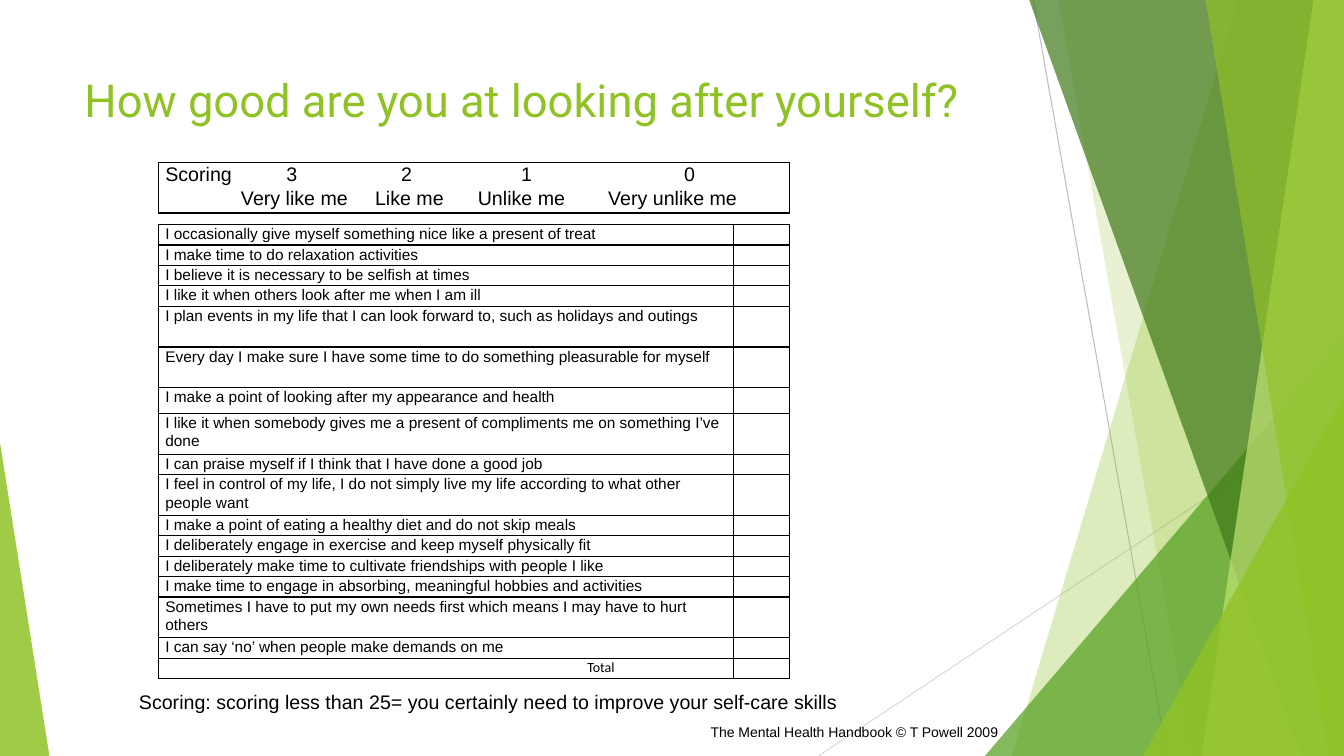
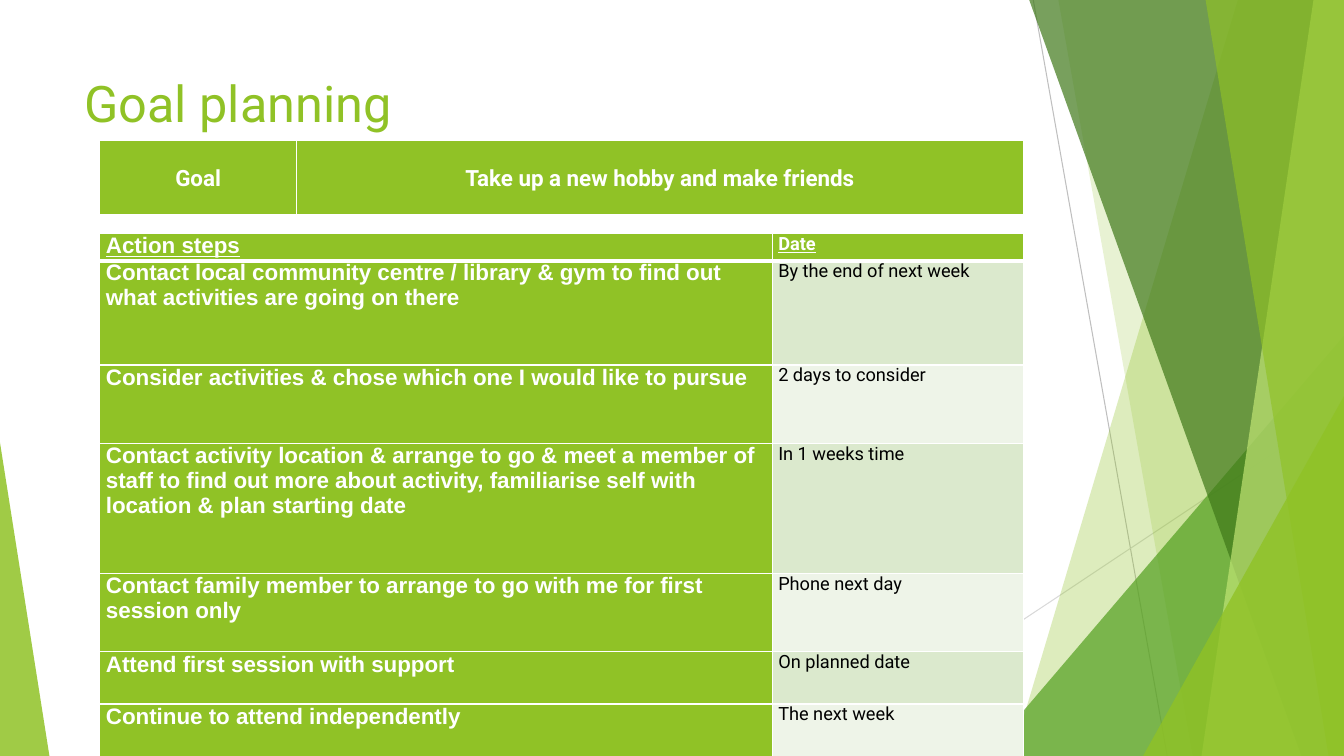
import lxml.etree
import pptx
import pptx.dml.color
import pptx.enum.shapes
import pptx.enum.text
import pptx.oxml.ns
import pptx.util

LIME, BLACK, WHITE = "90C226", "000000", "FFFFFF"
PALE = ("DBE9CD", "EEF4E8")

LINES = [
    (76.88, 0, 86.85, 100, "BFBFBF"),
    (100, 53.73, 60.9, 100, "D9D9D9"),
]
BANDS = [
    ("blade", 92.1, 75.3, LIME, 30),
    ("blade", 78.75, 88.73, LIME, 20),
    ("wedge", 73.28, 44.4, "54A021", 72),
    ("blade", 76.58, 96.83, "3F7819", 70),
    ("blade", 97.73, 89.4, "C0E474", 70),
    ("blade", 89.7, 98.85, LIME, 65),
    ("wedge", 85.05, 52.4, LIME, 80),
]

QUIZ = [
    ("I occasionally give myself something nice like a present of treat", 2.7),
    ("I make time to do relaxation activities", 2.7),
    ("I believe it is necessary to be selfish at times", 2.7),
    ("I like it when others look after me when I am ill", 2.7),
    ("I plan events in my life that I can look forward to, such as holidays and outings", 5.4),
    ("Every day I make sure I have some time to do something pleasurable for myself", 5.4),
    ("I make a point of looking after my appearance and health", 3.4),
    ("I like it when somebody gives me a present of compliments me on something I’ve done", 5.4),
    ("I can praise myself if I think that I have done a good job", 2.7),
    ("I feel in control of my life, I do not simply live my life according to what other people want", 5.4),
    ("I make a point of eating a healthy diet and do not skip meals", 2.7),
    ("I deliberately engage in exercise and keep myself physically fit", 2.7),
    ("I deliberately make time to cultivate friendships with people I like", 2.7),
    ("I make time to engage in absorbing, meaningful hobbies and activities", 2.7),
    ("Sometimes I have to put my own needs first which means I may have to hurt others", 5.4),
    ("I can say ‘no’ when people make demands on me", 2.7),
]

STEPS = [
    ("Contact local community centre / library & gym to find out what activities are going on there",
     "By the end of next week", 4),
    ("Consider activities & chose which one I would like to pursue", "2 days to consider", 3),
    ("Contact activity location & arrange to go & meet a member of staff to find out more about "
     "activity, familiarise self with location & plan starting date", "In 1 weeks time", 5),
    ("Contact family member to arrange to go with me for first session only", "Phone next day", 3),
    ("Attend first session with support", "On planned date", 2),
    ("Continue to attend independently", "The next week", 2),
]


def paint(code):
    return pptx.dml.color.RGBColor.from_string(code)


def look(size, name="Arial", hue=BLACK, **more):
    return {"size": pptx.util.Pt(size), "name": name, "hue": hue, **more}


def apply(thing, form):
    for key, value in form.items():
        setattr(thing, key, value)


def node(home, tag, **facts):
    return lxml.etree.SubElement(home, pptx.oxml.ns.qn(tag), facts)


class Deck:
    def __init__(self):
        self.show = pptx.Presentation()
        self.show.slide_width = pptx.util.Inches(13.33)
        self.show.slide_height = pptx.util.Inches(7.5)
        self.slide = None

    def wide(self, share):
        return round(self.show.slide_width * share / 100)

    def tall(self, share):
        return round(self.show.slide_height * share / 100)

    def box(self, left, top, width, height):
        return self.wide(left), self.tall(top), self.wide(width), self.tall(height)

    def page(self, title, size):
        self.slide = self.show.slides.add_slide(self.show.slide_layouts[6])
        for line in LINES:
            self.line(*line)
        kinds = {"blade": self.blade, "wedge": self.wedge}
        for kind, *rest in BANDS:
            kinds[kind](*rest)
        self.wedge(0, 58.53, LIME, 85, 3.68, 0)
        self.text(5.55, 8.93, 70.5, 9.6, title, look(size, "Roboto", LIME))

    def line(self, left, top, right, base, hue):
        link = self.slide.shapes.add_connector(
            pptx.enum.shapes.MSO_CONNECTOR.STRAIGHT,
            *self.box(left, top, right, base))
        link.line.color.rgb = paint(hue)
        link.line.width = pptx.util.Pt(0.75)
        node(link.element.spPr, "a:effectLst")

    def tint(self, shape, hue, share):
        shape.shadow.inherit = False
        shape.line.fill.background()
        shape.fill.solid()
        shape.fill.fore_color.rgb = paint(hue)
        tone = next(shape.element.spPr.iter(pptx.oxml.ns.qn("a:srgbClr")))
        node(tone, "a:alpha", val=str(share * 1000))

    def blade(self, top, base, hue, share):
        spots = [(100, 0), (100, 100), (base, 100)]
        pen = self.slide.shapes.build_freeform(self.wide(top), 0)
        pen.add_line_segments([(self.wide(x), self.tall(y)) for x, y in spots])
        self.tint(pen.convert_to_shape(), hue, share)

    def wedge(self, left, top, hue, share, width=None, peak=1):
        shape = self.slide.shapes.add_shape(
            pptx.enum.shapes.MSO_SHAPE.ISOSCELES_TRIANGLE,
            *self.box(left, top, width or 100 - left, 100 - top))
        shape.adjustments[0] = peak
        self.tint(shape, hue, share)

    def words(self, frame, text, form, para, stops=()):
        frame.word_wrap = True
        for spot, part in enumerate(text.split("\n")):
            item = frame.add_paragraph() if spot else frame.paragraphs[0]
            apply(item, para)
            if stops:
                tabs = node(item._p.get_or_add_pPr(), "a:tabLst")
                for stop in stops[spot]:
                    node(tabs, "a:tab", pos=str(self.wide(stop)), algn="l")
            if part:
                run = item.add_run()
                run.text = part
                apply(run.font, {k: v for k, v in form.items() if k != "hue"})
                run.font.color.rgb = paint(form["hue"])
            else:
                node(item._p, "a:endParaRPr", sz=str(round(form["size"].pt * 100)))

    def text(self, left, top, width, height, text, form, anchor="TOP"):
        frame = self.slide.shapes.add_textbox(*self.box(left, top, width, height)).text_frame
        frame.vertical_anchor = pptx.enum.text.MSO_ANCHOR[anchor]
        self.words(frame, text, form, {})

    def grid(self, left, top, cols, rows, hue, head=1):
        table = self.slide.shapes.add_table(
            len(rows), len(cols), *self.box(left, top, sum(cols), sum(rows))).table
        apply(table, {"first_row": False, "horz_banding": False})
        for col, size in zip(table.columns, cols):
            col.width = self.wide(size)
        for spot, (row, size) in enumerate(zip(table.rows, rows)):
            row.height = self.tall(size)
            thick = {"L": 1, "R": 1, "T": head if spot == 1 else 1, "B": 1 if spot else head}
            for cell in row.cells:
                self.edge(cell, thick, hue)
        return table

    def edge(self, cell, thick, hue):
        home = cell._tc.get_or_add_tcPr()
        for side, width in thick.items():
            rule = node(home, "a:ln" + side, w=str(int(pptx.util.Pt(width))))
            node(node(rule, "a:solidFill"), "a:srgbClr", val=hue)

    def cell(self, cell, text, form, para={}, fill=None, stops=(), pad=0.07, anchor="TOP"):
        inset = pptx.util.Inches(pad)
        apply(cell, {"margin_left": inset, "margin_right": inset,
                     "margin_top": 0, "margin_bottom": 0,
                     "vertical_anchor": pptx.enum.text.MSO_ANCHOR[anchor]})
        if fill:
            cell.fill.solid()
            cell.fill.fore_color.rgb = paint(fill)
        else:
            cell.fill.background()
        self.words(cell.text_frame, text, form, para, stops)


def score(deck):
    deck.page("How good are you at looking after yourself?", 32.4)
    loose = {"line_spacing": 1.07}
    key = deck.grid(11.78, 21.5, [46.95], [6.2], BLACK)
    deck.cell(key.cell(0, 0),
              "Scoring\t3\t2\t1\t0\n\tVery like me\tLike me\tUnlike me\tVery unlike me",
              look(14), loose,
              stops=[(9, 17.55, 26.48, 38.6), (5.63, 15.6, 23.25, 32.95)])
    rows = QUIZ + [("\tTotal", 2.7)]
    quiz = deck.grid(11.78, 29.7, [42.8, 4.15], [size for _, size in rows], BLACK)
    for spot, (text, _) in enumerate(rows):
        last = spot == len(QUIZ)
        deck.cell(quiz.cell(spot, 0), text,
                  look(10, "Calibri") if last else look(11), loose,
                  stops=[(31.4,)] if last else ())
        deck.cell(quiz.cell(spot, 1), "", look(10), loose)
    deck.text(9.6, 90.53, 80.8, 4.5,
              "Scoring: scoring less than 25= you certainly need to improve your self-care skills",
              look(14), "MIDDLE")
    deck.text(52.13, 95.07, 24, 3.6, "The Mental Health Handbook © T Powell 2009", look(10))


def plan(deck):
    deck.page("Goal planning", 36)
    mid = {"alignment": pptx.enum.text.PP_ALIGN.CENTER}
    goal = deck.grid(7.43, 18.6, [14.63, 54.08], [10], WHITE, 3)
    for spot, text in enumerate(("Goal", "Take up a new hobby and make friends")):
        deck.cell(goal.cell(0, spot), text, look(16, "Roboto", WHITE, bold=True),
                  mid, LIME, anchor="MIDDLE")
    sizes = [3.45 * size for size in [1] + [step[2] for step in STEPS]]
    table = deck.grid(7.43, 30.93, [50.03, 18.68], sizes, WHITE, 3)
    top = {"hue": WHITE, "bold": True, "underline": True}
    deck.cell(table.cell(0, 0), "Action steps", look(16, **top), fill=LIME, pad=0.06)
    deck.cell(table.cell(0, 1), "Date", look(13, "Roboto", **top), fill=LIME, pad=0.06)
    for spot, (step, date, _) in enumerate(STEPS):
        deck.cell(table.cell(spot + 1, 0), step, look(16, hue=WHITE, bold=True),
                  fill=LIME, pad=0.06)
        deck.cell(table.cell(spot + 1, 1), date, look(13, "Roboto"),
                  fill=PALE[spot % 2], pad=0.06)


def main():
    deck = Deck()
    score(deck)
    plan(deck)
    deck.show.save("out.pptx")


if __name__ == "__main__":
    main()
